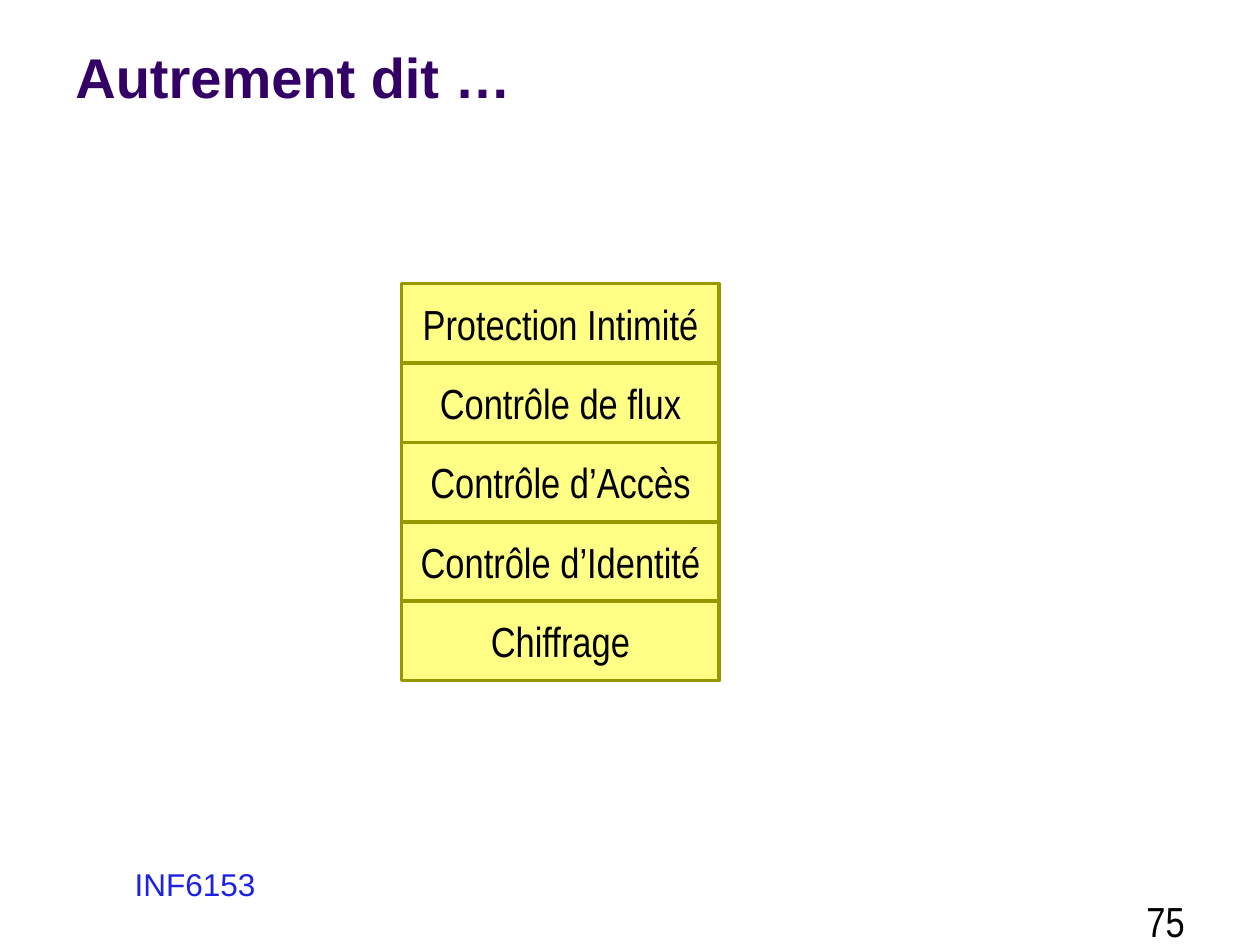
from pptx import Presentation
from pptx.dml.color import RGBColor
from pptx.enum.shapes import MSO_SHAPE
from pptx.enum.text import MSO_ANCHOR, PP_ALIGN
from pptx.util import Pt

RECTANGLE = MSO_SHAPE.RECTANGLE
TOP, MIDDLE, BOTTOM = MSO_ANCHOR.TOP, MSO_ANCHOR.MIDDLE, MSO_ANCHOR.BOTTOM
LEFT, CENTER, RIGHT = PP_ALIGN.LEFT, PP_ALIGN.CENTER, PP_ALIGN.RIGHT

PURPLE = RGBColor(0x33, 0x00, 0x66)
BLUE = RGBColor(0x1C, 0x21, 0xE4)
BLACK = RGBColor(0x00, 0x00, 0x00)
YELLOW = RGBColor(0xFF, 0xFF, 0x85)
OLIVE = RGBColor(0x97, 0x97, 0x00)

LAYERS = [
    "Protection Intimité",
    "Contrôle de flux",
    "Contrôle d’Accès",
    "Contrôle d’Identité",
    "Chiffrage",
]


def write_text(shape, text, *, size=24, font="Arial Narrow", color=BLACK,
               bold=False, align=CENTER, anchor=TOP, wrap=True):
    """Fill a shape with one formatted paragraph."""
    frame = shape.text_frame
    frame.word_wrap = wrap
    frame.vertical_anchor = anchor
    paragraph = frame.paragraphs[0]
    paragraph.alignment = align
    run = paragraph.add_run()
    run.text = text
    run.font.size = Pt(size)
    run.font.name = font
    run.font.bold = bold
    run.font.color.rgb = color


def add_label(slide, text, left, top, width, height, **text_format):
    """Add a text box with one formatted paragraph."""
    box = slide.shapes.add_textbox(Pt(left), Pt(top), Pt(width), Pt(height))
    write_text(box, text, **text_format)


def add_title(slide, left, top, width, height):
    """Add the slide title at the bottom of its box."""
    add_label(slide, "Autrement dit …", left, top, width, height, size=32,
              font="Arial", color=PURPLE, bold=True, align=LEFT, anchor=BOTTOM)


def add_layer_stack(slide, left, top, width, height):
    """Stack the protection layers in equal rows."""
    row_height = height / len(LAYERS)
    for index, layer in enumerate(LAYERS):
        shape = slide.shapes.add_shape(
            RECTANGLE, Pt(left), Pt(top + index * row_height),
            Pt(width), Pt(row_height))
        shape.shadow.inherit = False
        shape.fill.solid()
        shape.fill.fore_color.rgb = YELLOW
        shape.line.color.rgb = OLIVE
        shape.line.width = Pt(2)
        write_text(shape, layer, anchor=MIDDLE, wrap=False)


def add_footer(slide, left, top, width, height):
    """Add the course code on the left and the page number on the right."""
    add_label(slide, "INF6153 ", left, top, 228, 36,
              size=18, font="Arial", color=BLUE)
    number_width, number_height = 168, 42
    add_label(slide, "75", left + width - number_width,
              top + height - number_height, number_width, number_height,
              align=RIGHT)


def main():
    """Build and save the slide."""
    presentation = Presentation()
    presentation.slide_width = Pt(720)
    presentation.slide_height = Pt(540)
    slide = presentation.slides.add_slide(presentation.slide_layouts[6])
    add_title(slide, 36, -36, 684, 102)
    add_footer(slide, 0, 491, 684, 59)
    add_layer_stack(slide, 229.5, 162, 181.5, 227)
    presentation.save("out.pptx")


if __name__ == "__main__":
    main()
